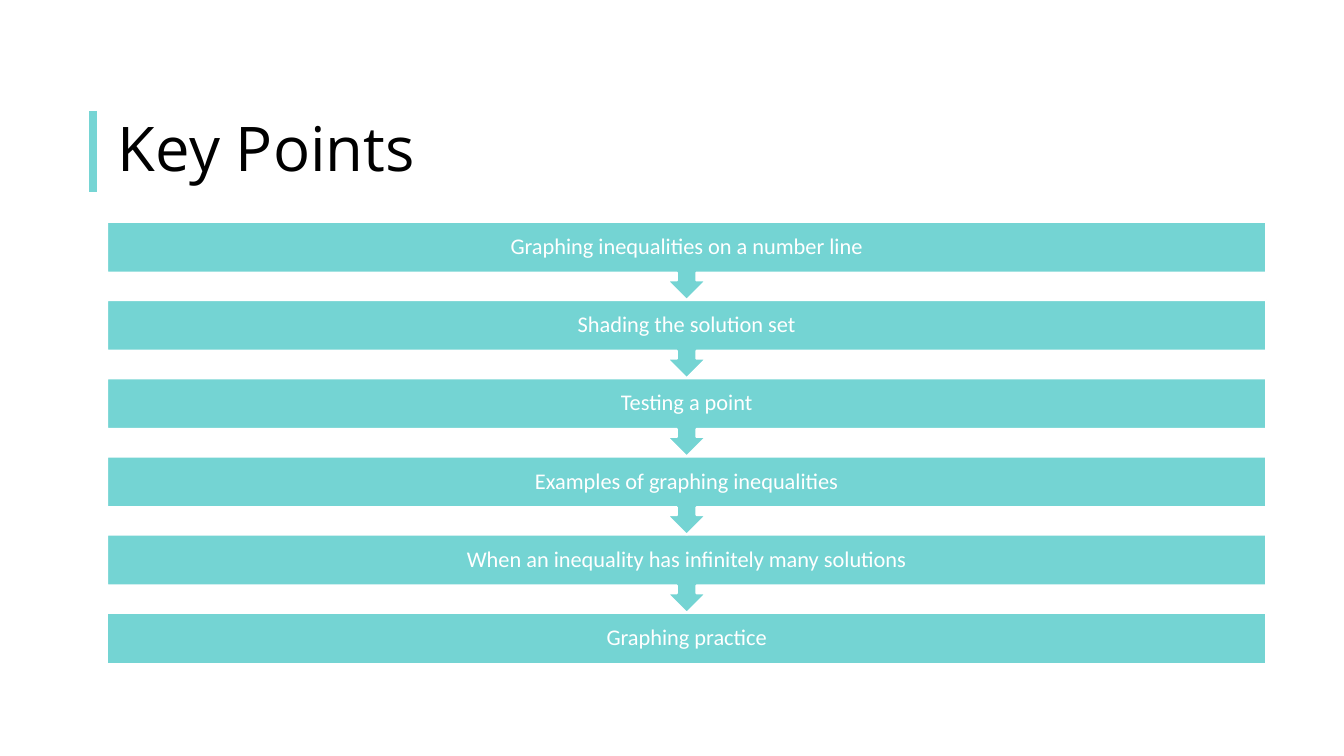
"""Build the Key Points slide: a title above a chain of six steps."""
from pptx import Presentation
from pptx.dml.color import RGBColor
from pptx.enum import shapes, text
from pptx.oxml.ns import qn
from pptx.util import Pt
from lxml import etree

TITLE = "Key Points"
STEPS = [
    "Graphing inequalities on a number line",
    "Shading the solution set",
    "Testing a point",
    "Examples of graphing inequalities",
    "When an inequality has infinitely many solutions",
    "Graphing practice",
]

ACCENT = RGBColor(0x76, 0xD5, 0xD4)
TEAL = RGBColor(0x74, 0xD4, 0xD3)
WHITE = RGBColor(0xFF, 0xFF, 0xFF)
BLACK = RGBColor(0x00, 0x00, 0x00)

TITLE_TOP, TITLE_HEIGHT = 79.2, 57.6
RULE_X = 66.5
STEP_LEFT, STEP_TOP, STEP_WIDTH = 76.5, 158.4, 828
STEP_PITCH, BAR_HEIGHT = 55.88, 36.5


def write(frame, words, size, font, color, align, inset):
    """Fill a text frame with one formatted paragraph."""
    frame.word_wrap = True
    frame.auto_size = text.MSO_AUTO_SIZE.NONE
    frame.vertical_anchor = text.MSO_ANCHOR.MIDDLE
    frame.margin_left = frame.margin_right = Pt(inset[0])
    frame.margin_top = frame.margin_bottom = Pt(inset[1])
    para = frame.paragraphs[0]
    para.alignment = align
    para.line_spacing = 0.9
    span = para.add_run()
    span.text = words
    span.font.size = Pt(size)
    span.font.name = font
    span.font.color.rgb = color


def add_step(page, index, words):
    """Draw one step, with an arrow below unless it is the last."""
    last = index == len(STEPS) - 1
    kind = shapes.MSO_SHAPE.RECTANGLE if last else shapes.MSO_SHAPE.DOWN_ARROW_CALLOUT
    box = page.shapes.add_shape(
        kind, Pt(STEP_LEFT), Pt(STEP_TOP + index * STEP_PITCH),
        Pt(STEP_WIDTH), Pt(BAR_HEIGHT if last else STEP_PITCH))
    box.shadow.inherit = False
    box.fill.solid()
    box.fill.fore_color.rgb = TEAL
    box.line.color.rgb = WHITE
    box.line.width = Pt(1.5)
    write(box.text_frame, words, size=16, font="Calibri", color=WHITE,
          align=text.PP_ALIGN.CENTER, inset=(8.64, 8.64))


def main():
    """Lay out the slide and save it."""
    deck = Presentation()
    deck.slide_width, deck.slide_height = Pt(960), Pt(540)
    page = deck.slides.add_slide(deck.slide_layouts[5])

    title = page.shapes.title
    title.left, title.top = Pt(77), Pt(TITLE_TOP)
    title.width, title.height = Pt(828), Pt(TITLE_HEIGHT)
    write(title.text_frame, TITLE, size=44, font="Open Sans", color=BLACK,
          align=text.PP_ALIGN.LEFT, inset=(7.2, 3.6))

    rule = page.shapes.add_connector(
        shapes.MSO_CONNECTOR.STRAIGHT, Pt(RULE_X), Pt(TITLE_TOP),
        Pt(RULE_X), Pt(TITLE_TOP + TITLE_HEIGHT))
    rule.line.color.rgb = ACCENT
    rule.line.width = Pt(6)
    etree.SubElement(rule._element.spPr, qn("a:effectLst"))

    for index, words in reversed(list(enumerate(STEPS))):
        add_step(page, index, words)

    deck.save("out.pptx")


if __name__ == "__main__":
    main()
